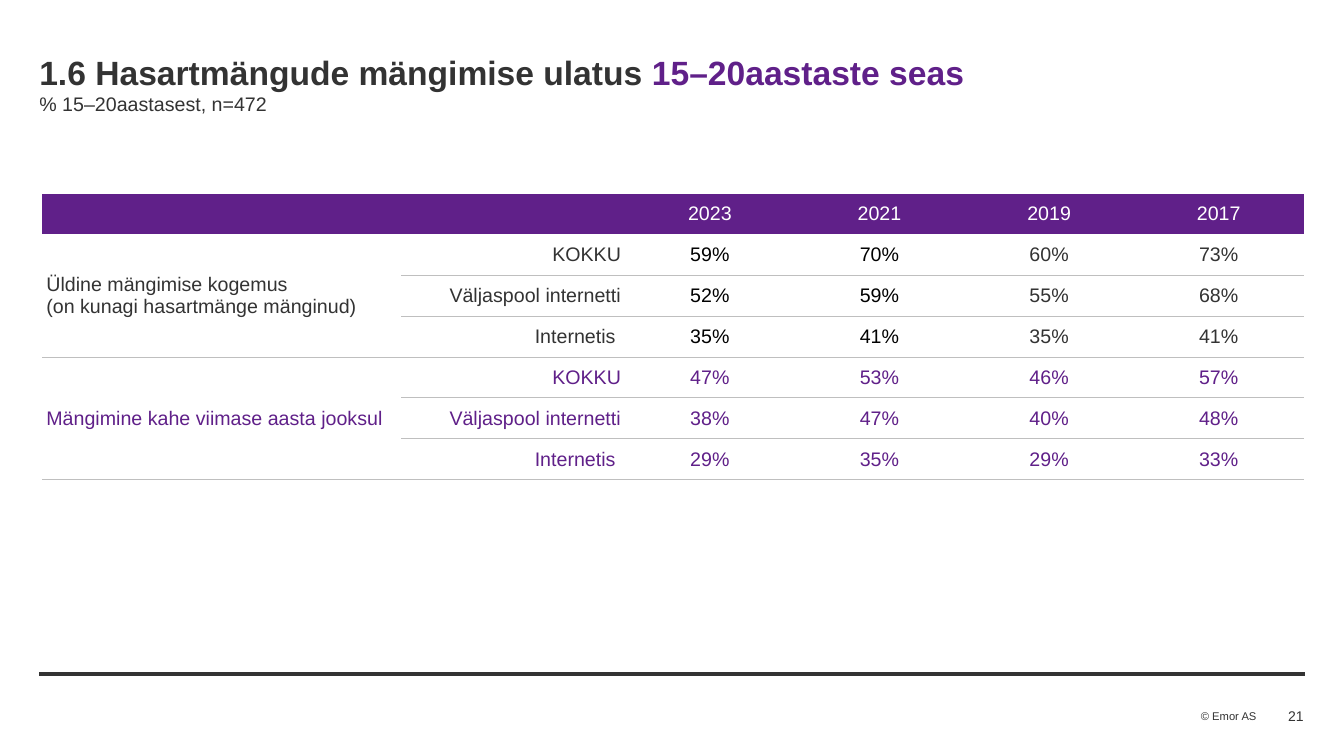
from lxml import etree
from pptx import Presentation
from pptx.dml.color import RGBColor
from pptx.enum.shapes import MSO_CONNECTOR
from pptx.enum.text import MSO_ANCHOR, PP_ALIGN
from pptx.oxml import parse_xml
from pptx.oxml.ns import nsdecls, qn
from pptx.util import Inches, Pt

COLORS = {"dark": "333333", "purple": "602089", "black": "000000",
          "white": "FFFFFF", "rule": "BFBFBF"}
FONT = "Arial"
PLAIN_TABLE = "{2D5ABB26-0587-4C30-8999-92F81FD0307C}"
YEARS = ["2023", "2021", "2019", "2017"]
PLACES = ["KOKKU", "Väljaspool internetti", "Internetis "]
GROUPS = [
    ("Üldine mängimise kogemus\v(on kunagi hasartmänge mänginud)", "dark", "black",
     [(59, 70, 60, 73), (52, 59, 55, 68), (35, 41, 35, 41)]),
    ("Mängimine kahe viimase aasta jooksul", "purple", "purple",
     [(47, 53, 46, 57), (38, 47, 40, 48), (29, 35, 29, 33)]),
]


def rgb(name):
    return RGBColor.from_string(COLORS[name])


def style(r, size, color, bold=False):
    r.font.name = FONT
    r.font.size = Pt(size)
    r.font.bold = bold
    r.font.color.rgb = rgb(color)


def add_box(s, left, top, width, height, inset_top=0, wrap=True):
    box = s.shapes.add_textbox(Inches(left), Inches(top), Inches(width), Inches(height))
    tf = box.text_frame
    tf.word_wrap = wrap
    tf.margin_left = tf.margin_right = tf.margin_bottom = 0
    tf.margin_top = Inches(inset_top)
    return tf


def add_title(s, left, top, width, height):
    p = add_box(s, left, top, width, height, inset_top=0.04).paragraphs[0]
    r = p.add_run()
    r.text = "1.6 Hasartmängude mängimise ulatus "
    style(r, 24, "dark", True)
    r = p.add_run()
    r.text = "15–20aastaste seas"
    style(r, 24, "purple", True)
    p.add_line_break()
    r = p.add_run()
    r.text = "% 15–20aastasest, n=472"
    style(r, 14, "dark")


def fill_cell(cell, text, color, align, inset_x=0.04, inset_y=0.04):
    cell.vertical_anchor = MSO_ANCHOR.MIDDLE
    cell.margin_left = cell.margin_right = Inches(inset_x)
    cell.margin_top = cell.margin_bottom = Inches(inset_y)
    cell.text_frame.text = text
    p = cell.text_frame.paragraphs[0]
    p.alignment = align
    for r in p.runs:
        style(r, 14, color)


def underline_cell(cell):
    line = parse_xml(
        f'<a:lnB {nsdecls("a")} w="{Pt(0.75)}"><a:solidFill>'
        f'<a:srgbClr val="{COLORS["rule"]}"/></a:solidFill></a:lnB>')
    cell._tc.get_or_add_tcPr().insert(0, line)


def add_group(table, top_row, title, color, recent_color, shares):
    last_row = top_row + len(shares) - 1
    head = table.cell(top_row, 0)
    head.merge(table.cell(last_row, 0))
    fill_cell(head, title, color, PP_ALIGN.LEFT)
    underline_cell(head)
    underline_cell(table.cell(last_row, 0))
    for i, (place, values) in enumerate(zip(PLACES, shares), top_row):
        fill_cell(table.cell(i, 1), place, color, PP_ALIGN.RIGHT)
        for j, value in enumerate(values):
            look = (recent_color, PP_ALIGN.CENTER) if j < 2 else (color, PP_ALIGN.CENTER, 0.07, 0)
            fill_cell(table.cell(i, j + 2), f"{value}%", *look)
        for j in range(1, len(table.columns)):
            underline_cell(table.cell(i, j))


def add_share_table(s, left, top, width, height):
    rows = 1 + len(GROUPS) * len(PLACES)
    cols = 2 + len(YEARS)
    table = s.shapes.add_table(rows, cols, Inches(left), Inches(top),
                               Inches(width), Inches(height)).table
    table.first_row = table.horz_banding = False
    table._tbl.tblPr.find(qn("a:tableStyleId")).text = PLAIN_TABLE
    label_widths = [3.56, 2.22]
    year_width = (width - sum(label_widths)) / len(YEARS)
    for column, w in zip(table.columns, label_widths + [year_width] * len(YEARS)):
        column.width = Inches(w)
    for i, row in enumerate(table.rows):
        row.height = Inches(height / rows)
        for cell in row.cells:
            if i:
                cell.fill.background()
            else:
                cell.fill.solid()
                cell.fill.fore_color.rgb = rgb("purple")
    for j, year in enumerate(YEARS, 2):
        fill_cell(table.cell(0, j), year, "white", PP_ALIGN.CENTER)
    for k, group in enumerate(GROUPS):
        add_group(table, 1 + k * len(PLACES), *group)


def add_footer(s, left, top, width):
    right = left + width
    rule = s.shapes.add_connector(MSO_CONNECTOR.STRAIGHT, Inches(left), Inches(top),
                                  Inches(right), Inches(top))
    rule.line.color.rgb = rgb("dark")
    rule.line.width = Pt(3)
    etree.SubElement(rule._element.spPr, qn("a:effectLst"))

    tf = add_box(s, right - 1.03, top + 0.35, 0.56, 0.13, wrap=False)
    tf.text = "© Emor AS"
    style(tf.paragraphs[0].runs[0], 8, "dark")

    tf = add_box(s, right - 1.07, top + 0.3, 1.06, 0.22)
    tf.vertical_anchor = MSO_ANCHOR.MIDDLE
    tf.text = "21"
    tf.paragraphs[0].alignment = PP_ALIGN.RIGHT
    style(tf.paragraphs[0].runs[0], 10, "dark")


def main():
    prs = Presentation()
    prs.slide_width = Inches(13.33)
    prs.slide_height = Inches(7.5)
    s = prs.slides.add_slide(prs.slide_layouts[6])
    add_footer(s, 0.39, 6.69, 12.55)
    add_title(s, 0.39, 0.47, 12.54, 0.44)
    add_share_table(s, 0.42, 1.92, 12.51, 2.84)
    prs.save("out.pptx")


if __name__ == "__main__":
    main()
